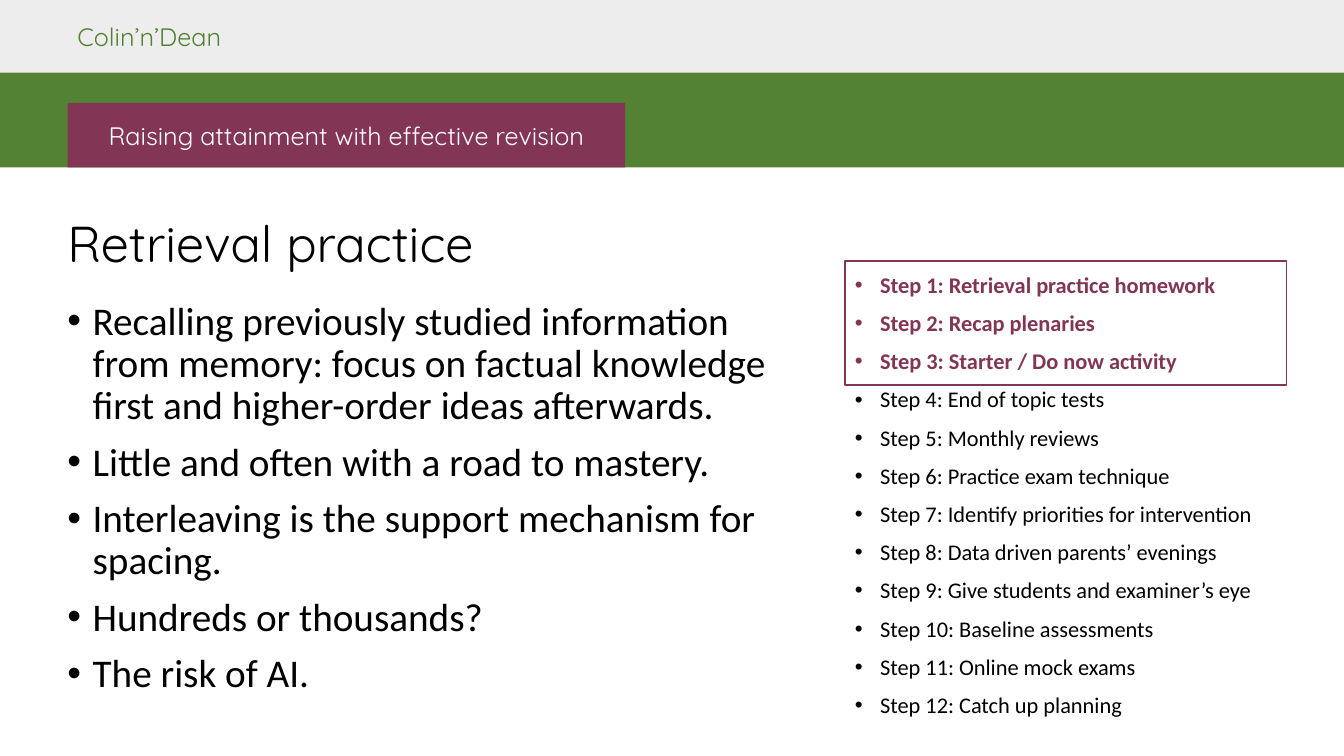
import pptx
import pptx.dml.color
import pptx.enum.shapes
import pptx.enum.text
import pptx.oxml.ns
import pptx.util
from lxml import etree

COLORS = {"grey": "EDEDED", "green": "548235", "plum": "823554",
          "white": "FFFFFF", "black": "000000"}
BRAND = "Colin’n’Dean"
TOPIC = "Raising attainment with effective revision"
TITLE = "Retrieval practice"
POINTS = [
    "Recalling previously studied information from memory: "
    "focus on factual knowledge first and higher-order ideas afterwards.",
    "Little and often with a road to mastery.",
    "Interleaving is the support mechanism for spacing.",
    "Hundreds or thousands?",
    "The risk of AI.",
]
STEPS = [
    "Retrieval practice homework",
    "Recap plenaries",
    "Starter / Do now activity",
    "End of topic tests",
    "Monthly reviews",
    "Practice exam technique",
    "Identify priorities for intervention",
    "Data driven parents’ evenings",
    "Give students and examiner’s eye",
    "Baseline assessments",
    "Online mock exams",
    "Catch up planning",
]
CURRENT_STEPS = 3

WIDTH, HEIGHT = 13.33, 7.5
COLUMNS = ROWS = 100
HEADER_ROWS, BAND_ROWS, TOPIC_ROWS = 9.6, 12.53, 8.53
BAND_BOTTOM = HEADER_ROWS + BAND_ROWS
MARGIN, TEXT_LEFT, STEPS_LEFT = 5.03, 4.28, 62.87
LIST_ROWS = 58.8
INDENT = pptx.util.Inches(0.25)

HEADING = {"name": "Quicksand", "size": pptx.util.Pt(18)}
TITLE_FONT = {"name": "Quicksand", "size": pptx.util.Pt(36)}
POINT_FONT = {"name": "Calibri", "size": pptx.util.Pt(28)}
STEP_FONT = {"name": "Calibri", "size": pptx.util.Pt(16)}


def place(left, top, width, height):
    column = pptx.util.Inches(WIDTH) / COLUMNS
    row = pptx.util.Inches(HEIGHT) / ROWS
    return (round(left * column), round(top * row),
            round(width * column), round(height * row))


def rgb(color):
    return pptx.dml.color.RGBColor.from_string(COLORS[color])


def add_rectangle(slide, area, fill=None, line=None):
    shape = slide.shapes.add_shape(
        pptx.enum.shapes.MSO_SHAPE.RECTANGLE, *place(*area))
    shape.shadow.inherit = False
    if fill:
        shape.fill.solid()
        shape.fill.fore_color.rgb = rgb(fill)
    else:
        shape.fill.background()
    if line:
        shape.line.color.rgb = rgb(line)
        shape.line.width = pptx.util.Pt(1)
    else:
        shape.line.fill.background()
    return shape


def add_text_box(slide, area):
    shape = slide.shapes.add_textbox(*place(*area))
    shape.text_frame.word_wrap = True
    return shape


def write(paragraph, text, color, font, **layout):
    run = paragraph.add_run()
    run.text = text
    run.font.color.rgb = rgb(color)
    for target, values in ((run.font, font), (paragraph, layout)):
        for name, value in values.items():
            setattr(target, name, value)


def add_bullet(paragraph):
    properties = paragraph._p.get_or_add_pPr()
    properties.set("marL", str(INDENT))
    properties.set("indent", str(-INDENT))
    bullet_font = etree.SubElement(properties, pptx.oxml.ns.qn("a:buFont"))
    bullet_font.set("typeface", "Arial")
    bullet = etree.SubElement(properties, pptx.oxml.ns.qn("a:buChar"))
    bullet.set("char", "•")


def write_list(shape, entries):
    frame = shape.text_frame
    for index, (text, color, font) in enumerate(entries):
        paragraph = frame.add_paragraph() if index else frame.paragraphs[0]
        add_bullet(paragraph)
        write(paragraph, text, color, font, line_spacing=0.9,
              space_before=pptx.util.Pt(10 if index else 0))


def step_entries():
    for number, step in enumerate(STEPS, 1):
        current = number <= CURRENT_STEPS
        yield (f"Step {number}: {step}", "plum" if current else "black",
               {**STEP_FONT, "bold": current})


def main():
    presentation = pptx.Presentation()
    presentation.slide_width = pptx.util.Inches(WIDTH)
    presentation.slide_height = pptx.util.Inches(HEIGHT)
    slide = presentation.slides.add_slide(presentation.slide_layouts[6])

    add_rectangle(slide, (0, 0, COLUMNS, HEADER_ROWS), "grey")
    brand = add_text_box(slide, (MARGIN, 2.13, 14.03, 5.33))
    write(brand.text_frame.paragraphs[0], BRAND, "green", HEADING)
    add_rectangle(slide, (0, HEADER_ROWS, COLUMNS, BAND_ROWS), "green")

    title = add_text_box(slide, (TEXT_LEFT, 28.27, 86.27, 7.87))
    write(title.text_frame.paragraphs[0], TITLE, "black", TITLE_FONT,
          line_spacing=0.9)

    topic = add_rectangle(
        slide, (MARGIN, BAND_BOTTOM - TOPIC_ROWS, 41.49, TOPIC_ROWS), "plum")
    topic.text_frame.vertical_anchor = pptx.enum.text.MSO_ANCHOR.MIDDLE
    write(topic.text_frame.paragraphs[0], TOPIC, "white", HEADING,
          alignment=pptx.enum.text.PP_ALIGN.CENTER)

    steps = add_text_box(slide, (STEPS_LEFT, 35.6, 33.53, LIST_ROWS))
    write_list(steps, step_entries())
    add_rectangle(slide, (STEPS_LEFT, 34.53, 32.86, 16.4), line="plum")

    points = add_text_box(slide, (TEXT_LEFT, 39.2, 55.21, LIST_ROWS))
    write_list(points, [(point, "black", POINT_FONT) for point in POINTS])

    presentation.save("out.pptx")


if __name__ == "__main__":
    main()
